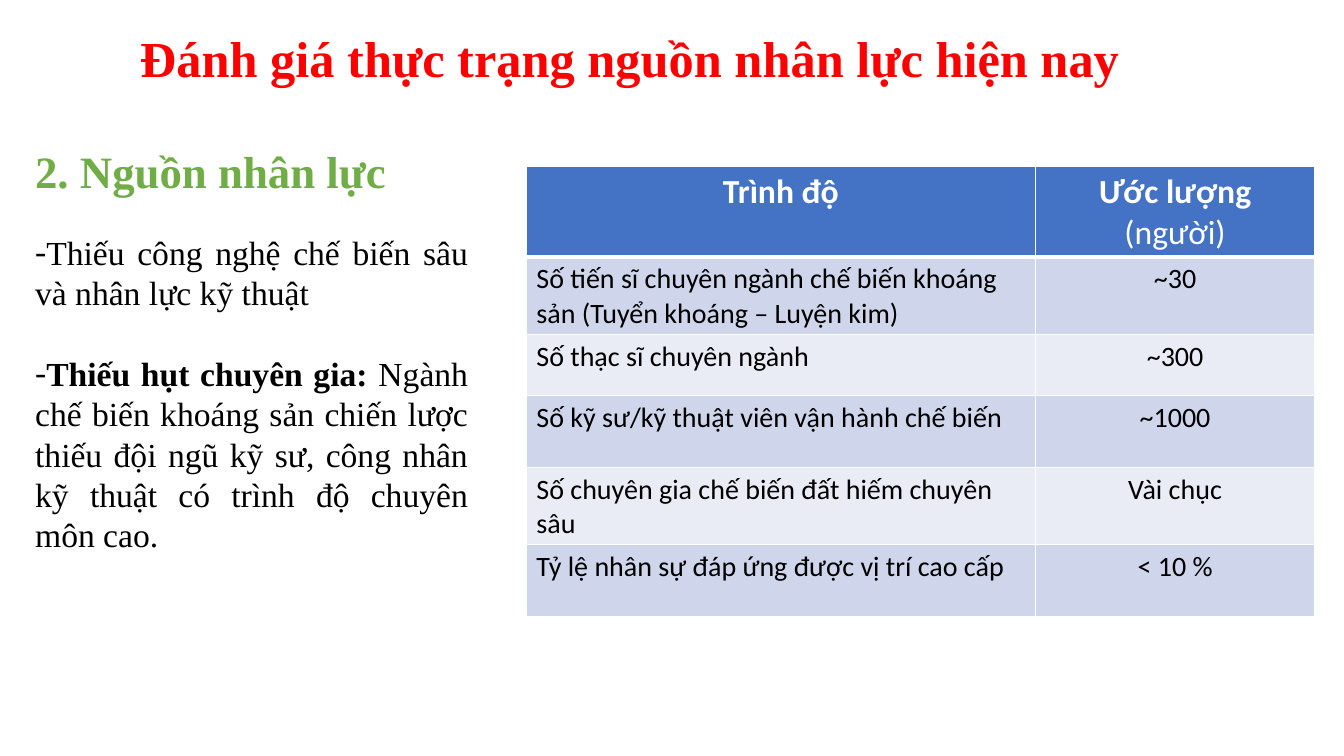
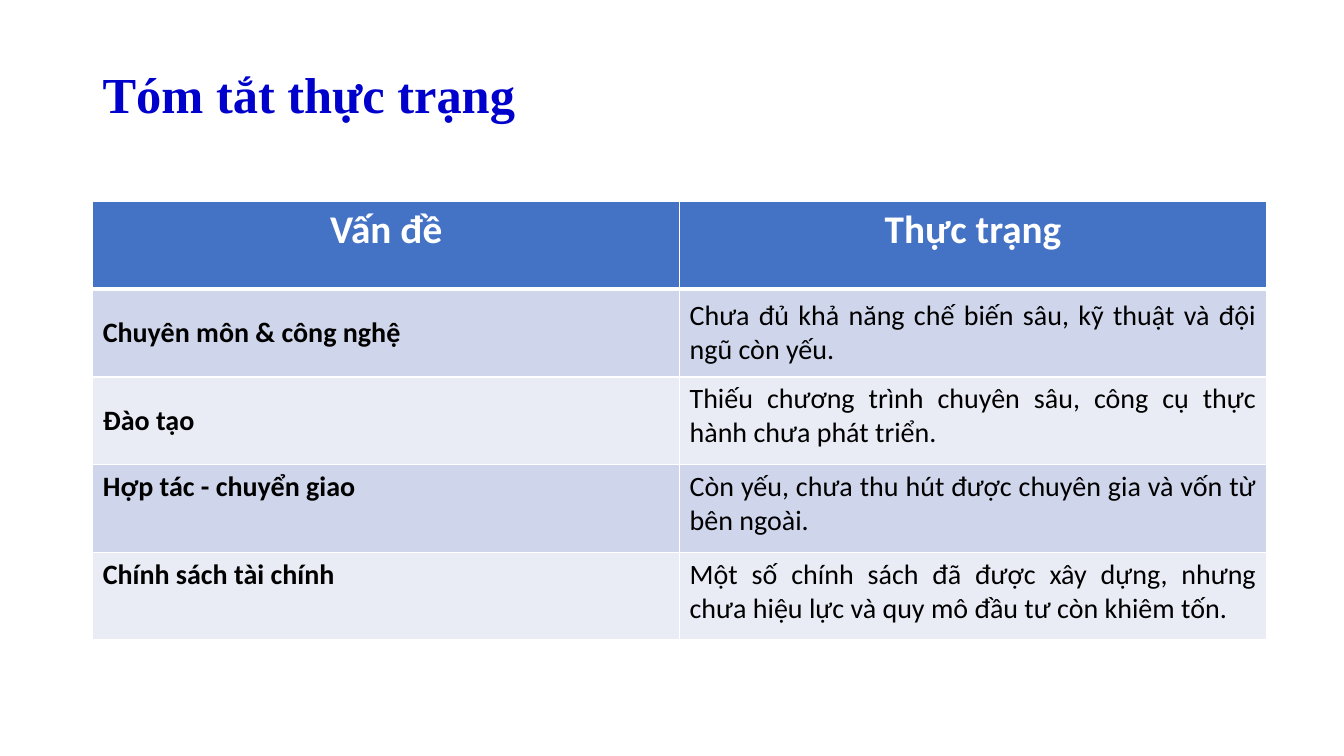
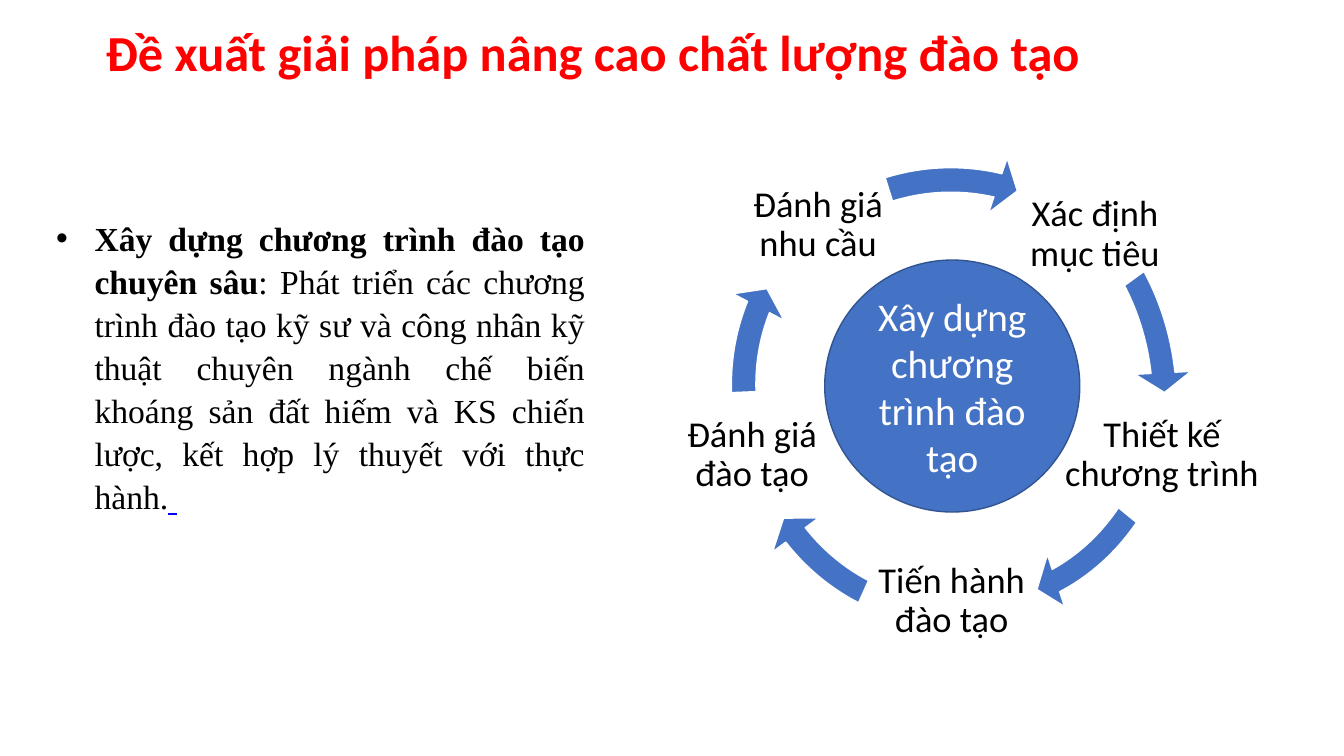
from dataclasses import dataclass

from lxml import etree
from pptx import Presentation
from pptx.dml.color import RGBColor
from pptx.enum import shapes, text
from pptx.oxml import ns
from pptx.util import Inches, Pt


@dataclass(frozen=True)
class Theme:
    serif: str = "Times New Roman"
    sans: str = "Calibri"
    red: str = "FF0000"
    navy: str = "0000CC"
    link: str = "0000FF"
    green: str = "70AD47"
    blue: str = "4472C4"
    edge: str = "325491"
    odd: str = "CFD5EA"
    even: str = "E9EBF5"
    white: str = "FFFFFF"
    black: str = "000000"
    title: int = 36
    head: int = 32
    large: int = 28
    label: int = 26
    body: int = 24
    cell: int = 20


T = Theme()
LEFT, MID, JUST = text.PP_ALIGN.LEFT, text.PP_ALIGN.CENTER, text.PP_ALIGN.JUSTIFY
TOP, CORE = text.MSO_ANCHOR.TOP, text.MSO_ANCHOR.MIDDLE

# Content: titles as (text, box, format)
TITLES = [
    ("Đánh giá thực trạng nguồn nhân lực hiện nay", (1.29, 0, 11.5, 1.21),
     dict(color=T.red)),
    ("Tóm tắt thực trạng", (0.92, 0.4, 11.5, 1.12), dict(color=T.navy)),
    ("Đề xuất giải pháp nâng cao chất lượng đào tạo", (0.95, 0, 11.5, 1.09),
     dict(color=T.red, font=T.sans, align=JUST)),
]

# Content: paragraphs as lists of (run, format)
STAFF = [
    [("Thiếu công nghệ chế biến sâu và nhân lực kỹ thuật", {})],
    [("Thiếu hụt chuyên gia: ", dict(bold=True)),
     ("Ngành chế biến khoáng sản chiến lược thiếu đội ngũ kỹ sư, công nhân "
      "kỹ thuật có trình độ chuyên môn cao.", {})],
]
PLAN = [
    ("Xây dựng chương trình đào tạo chuyên sâu", dict(bold=True)),
    (": Phát triển các chương trình đào tạo kỹ sư và công nhân kỹ thuật chuyên "
     "ngành chế biến khoáng sản đất hiếm và KS chiến lược, kết hợp lý thuyết "
     "với thực hành.", {}),
    (" ", dict(color=T.link, under=True)),
]

# Content: tables
LEVELS = [
    ("Trình độ", [("Ước lượng ", {}), ("(người)", dict(bold=False))]),
    ("Số tiến sĩ chuyên ngành chế biến khoáng sản (Tuyển khoáng – Luyện kim)", "~30"),
    ("Số thạc sĩ chuyên ngành", "~300"),
    ("Số kỹ sư/kỹ thuật viên vận hành chế biến", "~1000"),
    ("Số chuyên gia chế biến đất hiếm chuyên sâu", "Vài chục"),
    ("Tỷ lệ nhân sự đáp ứng được vị trí cao cấp", "< 10 %"),
]
ISSUES = [
    ("Vấn đề", "Thực trạng"),
    ("Chuyên môn & công nghệ",
     "Chưa đủ khả năng chế biến sâu, kỹ thuật và đội ngũ còn yếu."),
    ("Đào tạo", "Thiếu chương trình chuyên sâu, công cụ thực hành chưa phát triển."),
    ("Hợp tác - chuyển giao",
     "Còn yếu, chưa thu hút được chuyên gia và vốn từ bên ngoài."),
    ("Chính sách tài chính",
     "Một số chính sách đã được xây dựng, nhưng chưa hiệu lực và quy mô đầu tư "
     "còn khiêm tốn."),
]

# Content: cycle steps as (label, label box, arrow box, start and end degrees)
HUB = ("Xây dựng chương trình đào tạo", (8.18, 2.58, 2.53, 2.5))
STEPS = [
    ("Xác định mục tiêu", (10.05, 1.88, 1.62, 0.9),
     (7.27, 1.38, 4.56, 5.24), 323.96, 351.38),
    ("Thiết kế chương trình", (10.48, 3.89, 2.09, 1.25),
     (7.39, 1.4, 4.45, 4.85), 39.35, 66.08),
    ("Tiến hành đào tạo", (8.61, 5.42, 1.66, 1.09),
     (7.13, 1.43, 4.64, 4.94), 114.18, 137.93),
    ("Đánh giá đào tạo", (6.7, 3.89, 1.52, 1.25),
     (7.09, 1.47, 4.68, 4.68), 177.76, 201.83),
    ("Đánh giá nhu cầu", (7.42, 1.61, 1.39, 1.25),
     (7.09, 1.5, 4.68, 4.68), 252.6, 283.14),
]


# Helpers
def rgb(code):
    return RGBColor.from_string(code)


def place(box):
    return [Inches(n) for n in box]


def add(parent, tag, **attrs):
    return etree.SubElement(parent, ns.qn(tag), attrs)


def write(para, runs, size=T.body, font=T.sans, color=T.black, bold=False,
          under=None, align=LEFT, line=None, before=0, after=0, bullet=None,
          indent=0):
    para.alignment = align
    para.space_before, para.space_after = Pt(before), Pt(after)
    if line:
        para.line_spacing = line
    if bullet:
        props = para._p.get_or_add_pPr()
        props.set("marL", str(Inches(indent)))
        props.set("indent", str(-Inches(indent)))
        face = "Arial" if bullet == "•" else font
        add(props, "a:buFont", typeface=face)
        add(props, "a:buChar", char=bullet)
    for words, own in [(runs, {})] if isinstance(runs, str) else runs:
        run = para.add_run()
        run.text = words
        run.font.size, run.font.name = Pt(size), font
        run.font.bold = own.get("bold", bold)
        run.font.underline = own.get("under", under)
        run.font.color.rgb = rgb(own.get("color", color))


def label(slide, box, runs, anchor=CORE, inset=None, **form):
    frame = slide.shapes.add_textbox(*place(box)).text_frame
    frame.word_wrap, frame.vertical_anchor = True, anchor
    if inset is not None:
        frame.margin_left = frame.margin_right = Inches(inset)
        frame.margin_top = frame.margin_bottom = Inches(inset)
    write(frame.paragraphs[0], runs, **form)
    return frame


def shape(slide, kind, box, edge):
    item = slide.shapes.add_shape(kind, *place(box))
    item.shadow.inherit = False
    item.fill.solid()
    item.fill.fore_color.rgb = rgb(T.blue)
    item.line.color.rgb, item.line.width = rgb(edge), Pt(1)
    return item


def rule(cell, row):
    props = cell._tc.get_or_add_tcPr()
    wide = {"T": 3 if row == 1 else 1, "B": 3 if row == 0 else 1}
    for side in "LRTB":
        line = add(props, "a:ln" + side, w=str(Pt(wide.get(side, 1))))
        add(add(line, "a:solidFill"), "a:srgbClr", val=T.white)


def grid(slide, spot, cols, highs, rows, top, forms, mids=()):
    size = (sum(cols), sum(highs))
    table = slide.shapes.add_table(len(rows), len(cols), *place(spot + size)).table
    for col, wide in zip(table.columns, cols):
        col.width = Inches(wide)
    for r, row in enumerate(rows):
        table.rows[r].height = Inches(highs[r])
        for c, words in enumerate(row):
            cell = table.cell(r, c)
            rule(cell, r)
            cell.fill.solid()
            back = T.blue if r == 0 else T.odd if r % 2 else T.even
            cell.fill.fore_color.rgb = rgb(back)
            cell.vertical_anchor = CORE if (r, c) in mids else TOP
            form = dict(size=T.cell, **forms[c])
            if r == 0:
                form = dict(size=top, color=T.white, bold=True, align=MID)
            write(cell.text_frame.paragraphs[0], words, **form)


def begin(deck, index):
    slide = deck.slides.add_slide(deck.slide_layouts[6])
    words, box, own = TITLES[index]
    form = dict(size=T.title, font=T.serif, bold=True, line=0.9)
    label(slide, box, words, **{**form, **own})
    return slide


# Slides
def staff(deck):
    slide = begin(deck, 0)
    label(slide, (0.25, 1.21, 11.5, 1.03), "2. Nguồn nhân lực", size=T.head,
          font=T.serif, color=T.green, bold=True, line=0.9)
    grid(slide, (5.22, 1.65), (5.05, 2.77), (0.77, 0.71, 0.61, 0.71, 0.71, 0.71),
         LEVELS, T.body, ({}, dict(align=MID)))
    form = dict(font=T.serif, align=JUST, bullet="-")
    frame = label(slide, (0.25, 2.25, 4.49, 3.33), STAFF[0], anchor=TOP, **form)
    write(frame.add_paragraph(), STAFF[1], before=29, **form)


def issues(deck):
    slide = begin(deck, 1)
    grid(slide, (0.92, 2), (5.82, 5.82), (0.87,) * 5, ISSUES, T.large,
         (dict(bold=True), dict(align=JUST)), mids={(1, 0), (1, 1), (2, 0)})


def cycle(deck):
    slide = begin(deck, 2)
    label(slide, (0.46, 2.08, 5.44, 3.14), PLAN, anchor=TOP, font=T.serif,
          align=JUST, line=1.07, before=10, after=8, bullet="•", indent=0.38)
    for words, box, ring, start, end in STEPS:
        label(slide, box, words, inset=0.04, size=T.label, align=MID, line=0.9)
        arrow = shape(slide, shapes.MSO_SHAPE.CIRCULAR_ARROW, ring, T.white)
        # Angles are stored as 60000ths of a degree, scaled by 100000
        for i, value in enumerate((0.052, 3.36, end * 0.6, start * 0.6, 0.061)):
            arrow.adjustments[i] = value
    words, box = HUB
    frame = shape(slide, shapes.MSO_SHAPE.OVAL, box, T.edge).text_frame
    frame.word_wrap, frame.vertical_anchor = True, CORE
    write(frame.paragraphs[0], words, size=T.large, color=T.white, align=MID)


def main():
    deck = Presentation()
    deck.slide_width, deck.slide_height = Inches(13.33), Inches(7.5)
    for build in (staff, issues, cycle):
        build(deck)
    deck.save("out.pptx")


if __name__ == "__main__":
    main()
